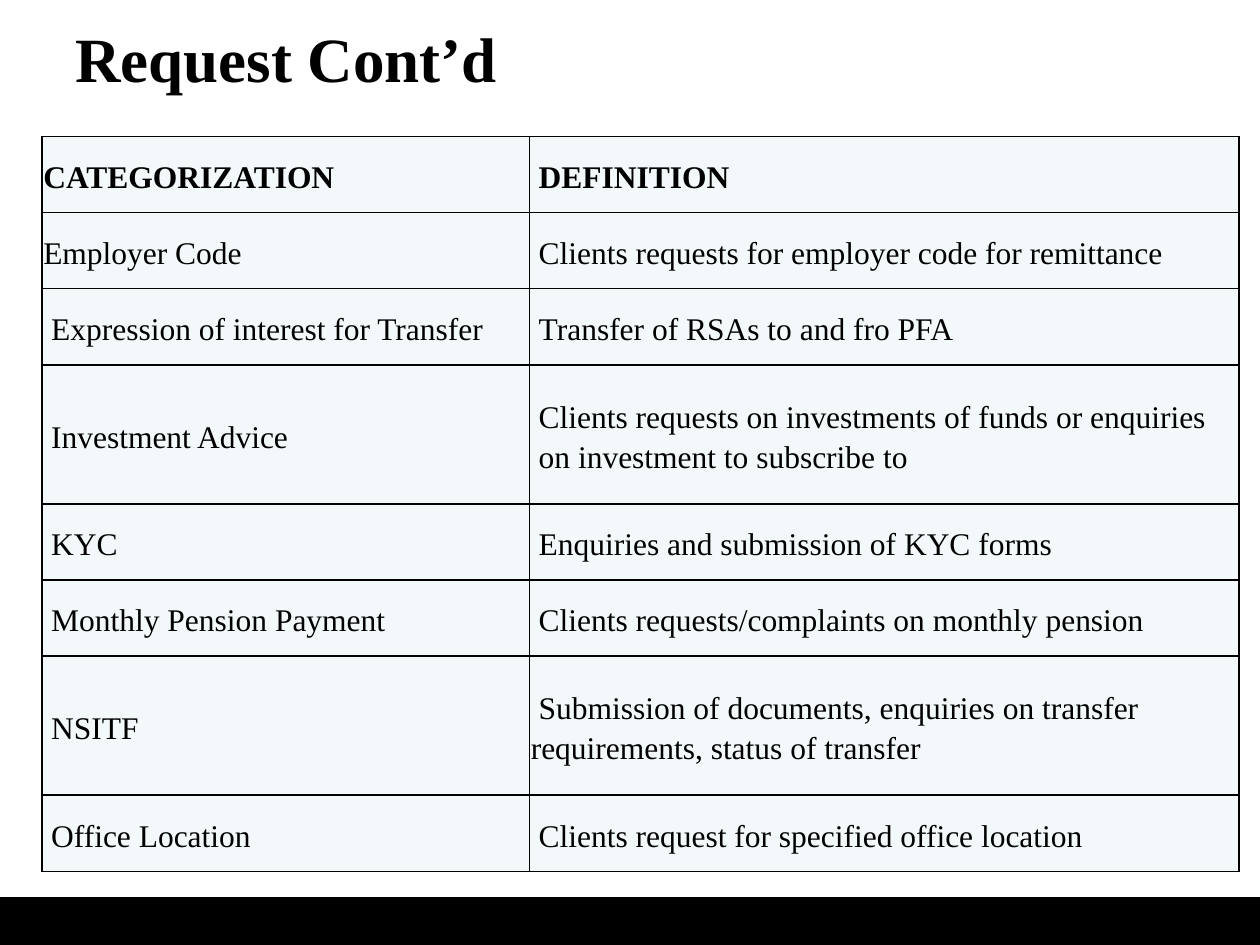
from lxml import etree
from pptx import Presentation
from pptx import util as u
from pptx.dml.color import RGBColor
from pptx.enum import shapes, text
from pptx.oxml import ns

# Content: one row per request category, each cell a list of lines
TITLE = "Request Cont’d"
ROWS = [
    (["CATEGORIZATION"], ["DEFINITION"]),
    (["Employer Code"], ["Clients requests for employer code for remittance"]),
    (["Expression of interest for Transfer"], ["Transfer of RSAs to and fro PFA"]),
    (["Investment Advice"], ["Clients requests on investments of funds or enquiries",
                             "on investment to subscribe to"]),
    (["KYC"], ["Enquiries and submission of KYC forms"]),
    (["Monthly Pension Payment"], ["Clients requests/complaints on monthly pension"]),
    (["NSITF"], ["Submission of documents, enquiries on transfer",
                 "requirements, status of transfer"]),
    (["Office Location"], ["Clients request for specified office location"]),
]
FLUSH_LINES = {"CATEGORIZATION", "Employer Code", "requirements, status of transfer"}

THEME = {
    "font": "Times New Roman", "title_size": 36, "cell_size": 18,
    "ink": "000000", "cell": "F3F9FA", "border": 1,
}
COLUMN_WIDTHS = (278.6, 405.4)
ROW_HEIGHTS = {1: 43.5, 2: 79.5}  # by number of lines
LINE_INDENT = 4.5
INK = RGBColor.from_string(THEME["ink"])


def style(paragraph, size, bold):
    font = paragraph.font
    font.name, font.size, font.bold = THEME["font"], u.Pt(size), bold
    font.color.rgb = INK


def add_borders(cell):
    properties = cell._tc.get_or_add_tcPr()
    for side in ("lnL", "lnR", "lnT", "lnB"):
        line = etree.SubElement(properties, ns.qn(f"a:{side}"), w=str(u.Pt(THEME["border"])))
        fill = etree.SubElement(line, ns.qn("a:solidFill"))
        etree.SubElement(fill, ns.qn("a:srgbClr"), val=THEME["ink"])


def fill_cell(cell, lines, bold):
    add_borders(cell)
    cell.fill.solid()
    cell.fill.fore_color.rgb = RGBColor.from_string(THEME["cell"])
    cell.vertical_anchor = text.MSO_ANCHOR.MIDDLE
    cell.margin_left = cell.margin_right = cell.margin_top = u.Pt(0.75)
    cell.margin_bottom = 0
    cell.text_frame.text = "\n".join(lines)
    for paragraph in cell.text_frame.paragraphs:
        if paragraph.text not in FLUSH_LINES:
            paragraph._p.get_or_add_pPr().set("marL", str(u.Pt(LINE_INDENT)))
        paragraph.line_spacing = 1.15
        style(paragraph, THEME["cell_size"], bold)


def main():
    deck = Presentation()
    deck.slide_width, deck.slide_height = u.Pt(720), u.Pt(540)
    slide = deck.slides.add_slide(deck.slide_layouts[6])

    # Footer band
    band = slide.shapes.add_shape(shapes.MSO_SHAPE.RECTANGLE,
                                  0, u.Pt(512.6), u.Pt(720), u.Pt(27.4))
    band.shadow.inherit = False
    band.fill.solid()
    band.fill.fore_color.rgb = INK
    band.line.fill.background()

    # Title
    heading = slide.shapes.add_textbox(u.Pt(36), u.Pt(6), u.Pt(648), u.Pt(54)).text_frame
    heading.word_wrap = True
    heading.vertical_anchor = text.MSO_ANCHOR.MIDDLE
    heading.text = TITLE
    style(heading.paragraphs[0], THEME["title_size"], True)

    # Category table
    heights = [ROW_HEIGHTS[max(map(len, row))] for row in ROWS]
    categories = slide.shapes.add_table(
        len(ROWS), len(COLUMN_WIDTHS), u.Pt(24), u.Pt(78),
        u.Pt(sum(COLUMN_WIDTHS)), u.Pt(sum(heights))).table
    categories.first_row = categories.horz_banding = False
    for column, width in zip(categories.columns, COLUMN_WIDTHS):
        column.width = u.Pt(width)
    for r, (row, height) in enumerate(zip(ROWS, heights)):
        categories.rows[r].height = u.Pt(height)
        for c, lines in enumerate(row):
            fill_cell(categories.cell(r, c), lines, bold=r == 0)

    deck.save("out.pptx")


if __name__ == "__main__":
    main()
